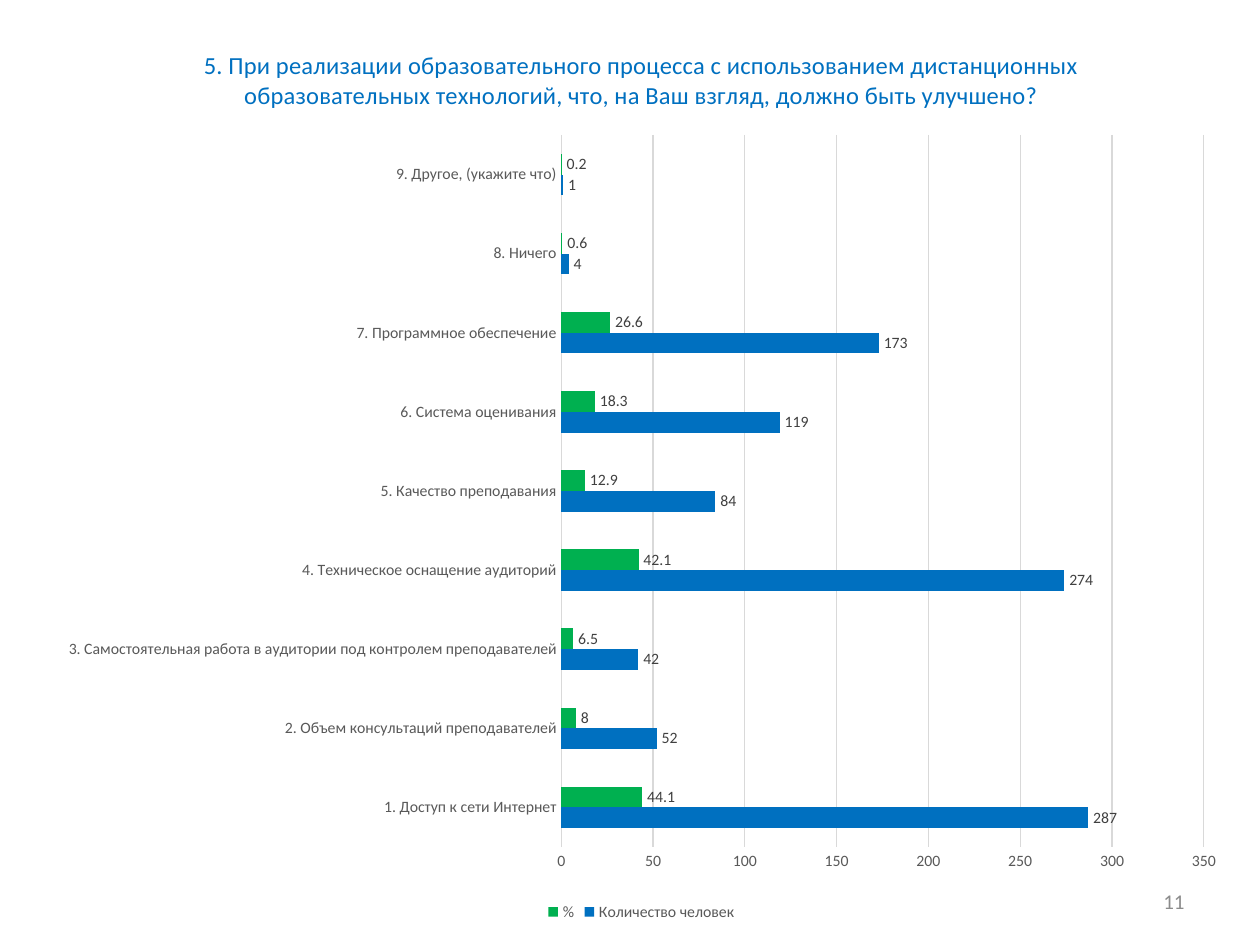
from lxml.etree import SubElement
from pptx import Presentation
from pptx.chart.data import CategoryChartData
from pptx.dml.color import RGBColor
from pptx.enum.chart import XL_CHART_TYPE, XL_LABEL_POSITION, XL_LEGEND_POSITION, XL_TICK_MARK
from pptx.enum.text import MSO_ANCHOR, PP_ALIGN
from pptx.oxml.ns import qn
from pptx.util import Inches, Pt

COLORS = {
    "blue": "0070C0",
    "green": "00B050",
    "grid": "D9D9D9",
    "axis": "595959",
    "label": "404040",
    "number": "8C8C8C",
    "black": "000000",
}
TITLE = (
    "5. При реализации образовательного процесса с использованием дистанционных "
    "образовательных технологий, что, на Ваш взгляд, должно быть улучшено?"
)
ANSWERS = [
    ("1. Доступ к сети Интернет", 287, 44.1),
    ("2. Объем консультаций преподавателей", 52, 8),
    ("3. Самостоятельная работа в аудитории под контролем преподавателей", 42, 6.5),
    ("4. Техническое оснащение аудиторий", 274, 42.1),
    ("5. Качество преподавания", 84, 12.9),
    ("6. Система оценивания", 119, 18.3),
    ("7. Программное обеспечение", 173, 26.6),
    ("8. Ничего", 4, 0.6),
    ("9. Другое, (укажите что)", 1, 0.2),
]
SERIES = [("Количество человек", "blue"), ("%", "green")]


def rgb(name):
    return RGBColor.from_string(COLORS[name])


def style_font(font, size, color):
    font.name = "Calibri"
    font.size = Pt(size)
    font.bold = False
    font.color.rgb = rgb(color)


def write(tf, text, size=12, color="black", align=PP_ALIGN.LEFT):
    p = tf.paragraphs[0]
    p.alignment = align
    r = p.add_run()
    r.text = text
    style_font(r.font, size, color)


class SlideBuilder:
    def __init__(self, prs):
        self.prs = prs
        self.s = prs.slides.add_slide(prs.slide_layouts[6])

    def box(self, x, y, w, h):
        width, height = self.prs.slide_width, self.prs.slide_height
        return int(x * width), int(y * height), int(w * width), int(h * height)

    def text(self, area, text, **fmt):
        tf = self.s.shapes.add_textbox(*self.box(*area)).text_frame
        tf.word_wrap = True
        tf.vertical_anchor = MSO_ANCHOR.MIDDLE
        write(tf, text, **fmt)

    def bar_chart(self, area, plot_area, title, answers, series):
        data = CategoryChartData()
        names, *columns = zip(*answers)
        data.categories = names
        for (name, _), values in zip(series, columns):
            data.add_series(name, values)
        chart = self.s.shapes.add_chart(
            XL_CHART_TYPE.BAR_CLUSTERED, *self.box(*area), data
        ).chart
        style_font(chart.font, 10, "black")
        chart.has_title = True
        write(chart.chart_title.text_frame, title, size=14, color="blue", align=PP_ALIGN.CENTER)
        chart.chart_title.include_in_layout = False
        chart.has_legend = True
        chart.legend.position = XL_LEGEND_POSITION.BOTTOM
        chart.legend.include_in_layout = False
        style_font(chart.legend.font, 9, "axis")
        self.axes(chart)
        self.bars(chart.plots[0], series)
        self.place_plot(chart, plot_area)

    def axes(self, chart):
        cat, val = chart.category_axis, chart.value_axis
        for axis in (cat, val):
            axis.major_tick_mark = axis.minor_tick_mark = XL_TICK_MARK.NONE
            style_font(axis.tick_labels.font, 9, "axis")
        val.has_major_gridlines = True
        val.minimum_scale, val.maximum_scale, val.major_unit = 0, 350, 50
        val.format.line.fill.background()
        for line in (cat.format.line, val.major_gridlines.format.line):
            line.color.rgb = rgb("grid")
            line.width = Pt(0.75)

    def bars(self, plot, series):
        plot.gap_width = 182
        plot.overlap = 0
        plot.vary_by_categories = False
        for ser, (_, color) in zip(plot.series, series):
            ser.format.fill.solid()
            ser.format.fill.fore_color.rgb = rgb(color)
            ser.invert_if_negative = False
            labels = ser.data_labels
            labels.show_value = True
            labels.position = XL_LABEL_POSITION.OUTSIDE_END
            style_font(labels.font, 9, "label")

    def place_plot(self, chart, plot_area):
        plot = chart.plots[0]._element.getparent()
        for old in plot.findall(qn("c:layout")):
            plot.remove(old)
        layout = SubElement(plot, qn("c:layout"))
        plot.insert(0, layout)
        manual = SubElement(layout, qn("c:manualLayout"))
        settings = [("layoutTarget", "inner"), ("xMode", "edge"), ("yMode", "edge")]
        settings += zip("xywh", map(str, plot_area))
        for tag, value in settings:
            SubElement(manual, qn(f"c:{tag}")).set("val", value)


def main():
    prs = Presentation()
    prs.slide_width, prs.slide_height = Inches(10), Inches(7.5)
    slide = SlideBuilder(prs)
    slide.text((0.717, 0.927, 0.233, 0.053), "11", color="number", align=PP_ALIGN.RIGHT)
    slide.bar_chart(
        (0.035, 0.02, 0.948, 0.96), (0.433, 0.128, 0.538, 0.785), TITLE, ANSWERS, SERIES
    )
    prs.save("out.pptx")


if __name__ == "__main__":
    main()
